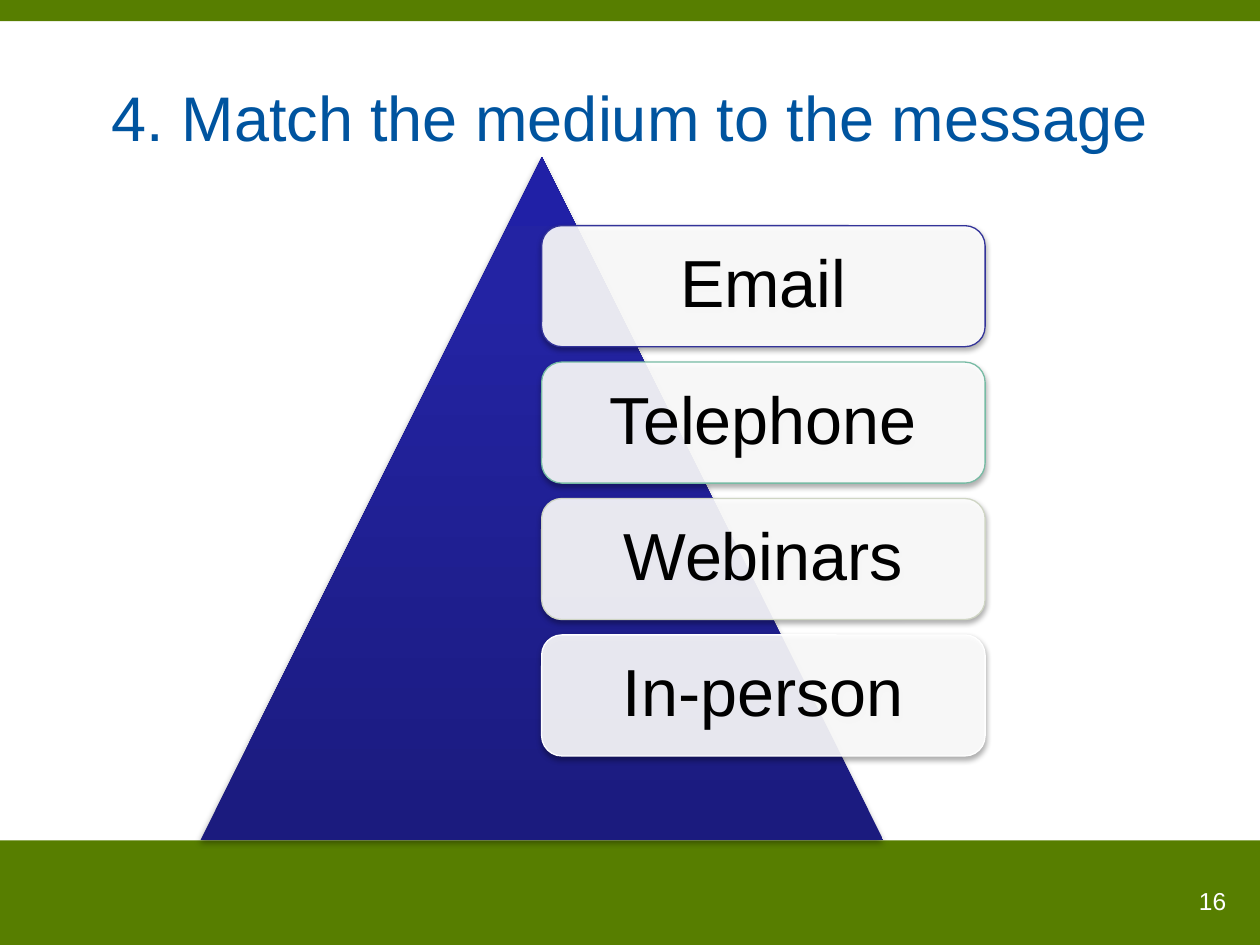
from dataclasses import dataclass

from lxml.etree import SubElement
from pptx import Presentation
from pptx.dml.color import RGBColor
from pptx.enum.shapes import MSO_SHAPE
from pptx.enum.text import MSO_ANCHOR, PP_ALIGN
from pptx.oxml.ns import qn
from pptx.util import Cm, Pt


@dataclass(frozen=True)
class Theme:
    font: str = "Arial"
    green: str = "577E00"
    blue: str = "00549F"
    white: str = "FFFFFF"
    black: str = "000000"
    navy: tuple = ((0, "1B1B7E"), (80, "2323A3"), (100, "2020A6"))
    title: int = 36
    card: int = 38
    page: int = 14


@dataclass(frozen=True)
class Box:
    left: float
    top: float
    width: float
    height: float

    def cm(self) -> tuple:
        return tuple(Cm(n) for n in (self.left, self.top, self.width, self.height))


@dataclass(frozen=True)
class Card:
    text: str
    line: str


THEME = Theme()
CARDS = (
    Card("Email", "333399"),
    Card("Telephone", "77BBA4"),
    Card("Webinars", "CFD5C4"),
    Card("In-person", "FFFFFF"),
)
FIRST = Box(10.92, 4.55, 8.94, 2.44)
STEP = 2.75


def add_shape(slide, kind, box: Box, fill: str):
    shape = slide.shapes.add_shape(kind, *box.cm())
    shape.shadow.inherit = False
    shape.fill.solid()
    shape.fill.fore_color.rgb = RGBColor.from_string(fill)
    shape.line.fill.background()
    return shape


def add_color(node, tag: str, color: str, alpha: int = 100, **attrs: str) -> None:
    """Add a child that holds one colour, with its opacity in percent."""
    child = SubElement(node, qn(tag), attrs)
    rgb = SubElement(child, qn("a:srgbClr"), val=color)
    if alpha < 100:
        SubElement(rgb, qn("a:alpha"), val=str(alpha * 1000))


def add_shadow(shape) -> None:
    effects = shape.element.spPr.find(qn("a:effectLst"))
    add_color(effects, "a:outerShdw", THEME.black, 35, blurRad="40000",
              dist="23000", dir="5400000", rotWithShape="0")


def set_text(shape, text: str, *, size: int, color: str, align=PP_ALIGN.CENTER,
             anchor=MSO_ANCHOR.MIDDLE, inset: float = 0, leading: float = 1) -> None:
    frame = shape.text_frame
    frame.word_wrap = True
    frame.vertical_anchor = anchor
    if inset:
        frame.margin_left = frame.margin_right = Cm(inset)
        frame.margin_top = frame.margin_bottom = Cm(inset)
    para = frame.paragraphs[0]
    para.alignment = align
    para.line_spacing = leading
    run = para.add_run()
    run.text = text
    run.font.name = THEME.font
    run.font.size = Pt(size)
    run.font.color.rgb = RGBColor.from_string(color)


def add_peak(slide, box: Box) -> None:
    """Draw the pyramid, shaded from its base up."""
    peak = add_shape(slide, MSO_SHAPE.ISOSCELES_TRIANGLE, box, THEME.navy[0][1])
    peak.fill.gradient()
    peak.fill.gradient_angle = 90
    stops = peak.element.spPr.find(qn("a:gradFill")).find(qn("a:gsLst"))
    for stop in list(stops):
        stops.remove(stop)
    for place, color in THEME.navy:
        add_color(stops, "a:gs", color, pos=str(place * 1000))
    add_shadow(peak)


def add_card(slide, card: Card, box: Box) -> None:
    shape = add_shape(slide, MSO_SHAPE.ROUNDED_RECTANGLE, box, THEME.white)
    rgb = shape.element.spPr.find(qn("a:solidFill")).find(qn("a:srgbClr"))
    SubElement(rgb, qn("a:alpha"), val="90000")
    shape.line.color.rgb = RGBColor.from_string(card.line)
    shape.line.width = Pt(0.75)
    add_shadow(shape)
    set_text(shape, card.text, size=THEME.card, color=THEME.black,
             inset=0.41, leading=0.9)


def main() -> None:
    deck = Presentation()
    deck.slide_width, deck.slide_height = Cm(25.4), Cm(19.05)
    slide = deck.slides.add_slide(deck.slide_layouts[6])

    for band in (Box(0, 16.94, 25.4, 2.11), Box(0, 0, 25.4, 0.43)):
        add_shape(slide, MSO_SHAPE.RECTANGLE, band, THEME.green)

    title = slide.shapes.add_textbox(*Box(1.27, 0.76, 22.86, 3.18).cm())
    set_text(title, "4. Match the medium to the message",
             size=THEME.title, color=THEME.blue)
    page = slide.shapes.add_textbox(*Box(22.43, 17.73, 2.54, 1.32).cm())
    set_text(page, "16", size=THEME.page, color=THEME.white,
             align=PP_ALIGN.RIGHT, anchor=MSO_ANCHOR.TOP)

    add_peak(slide, Box(4.04, 3.17, 13.77, 13.77))
    for row, card in enumerate(CARDS):
        top = FIRST.top + row * STEP
        add_card(slide, card, Box(FIRST.left, top, FIRST.width, FIRST.height))

    deck.save("out.pptx")


if __name__ == "__main__":
    main()
